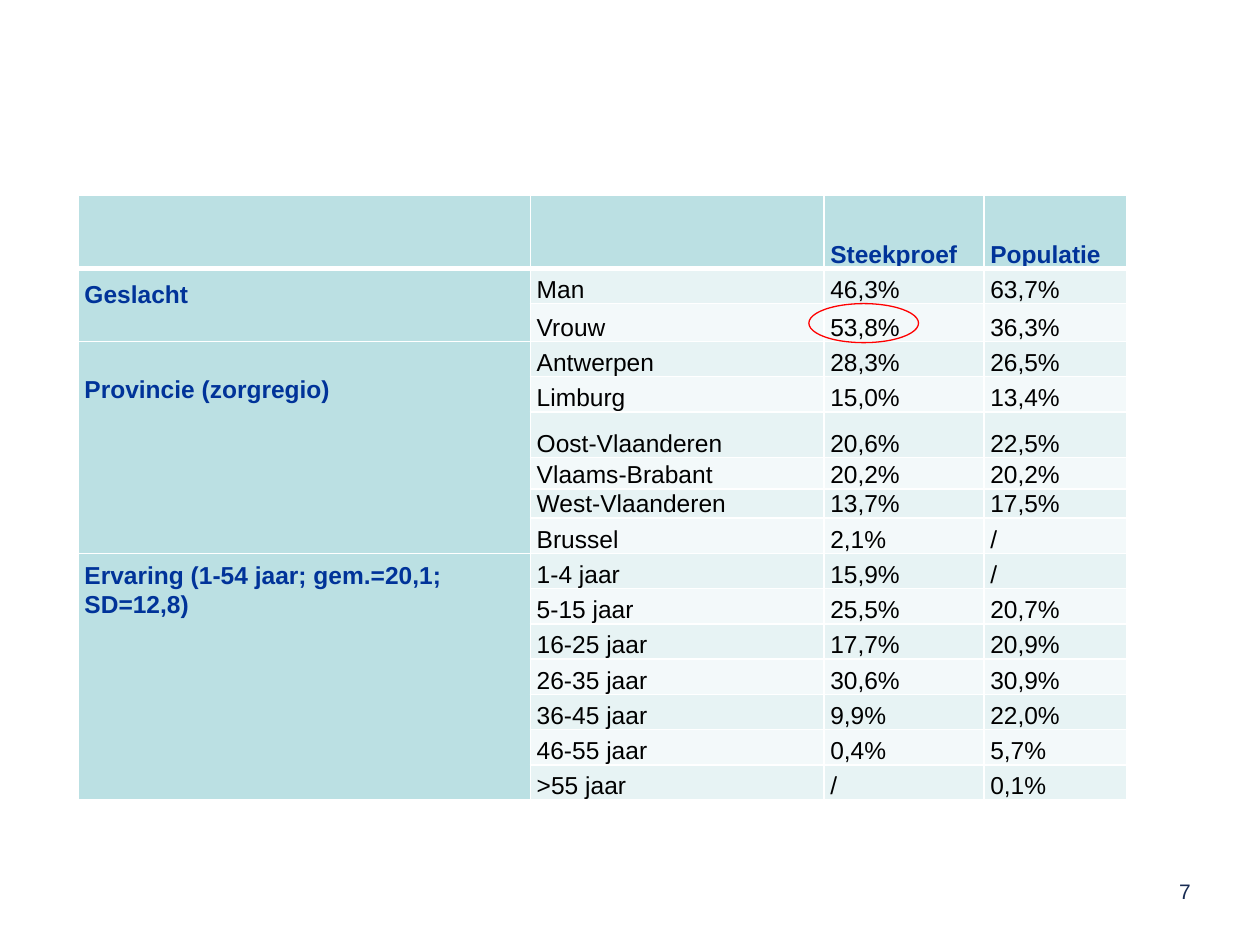
from lxml import etree
from pptx import Presentation
from pptx.dml.color import RGBColor
from pptx.enum.shapes import MSO_SHAPE as Shape
from pptx.enum.text import MSO_ANCHOR as Anchor, PP_ALIGN as Align
from pptx.oxml.ns import qn
from pptx.util import Inches, Pt

LABEL_FILL = "BBE0E3"
BAND_FILLS = ["E7F3F4", "F3F9FA"]
LABEL_COLOR = "003399"

COLUMN_WIDTHS = [3.59, 2.33, 1.27, 1.13]
ROW_HEIGHTS = [0.58, 0.28, 0.3, 0.28, 0.28, 0.36, 0.25, 0.23] + [0.28] * 8

HEADER = ["", "", "Steekproef", "Populatie"]
# Label, space above the label, rows
GROUPS = [
    ("Geslacht", 0.09, [
        ("Man", "46,3%", "63,7%"),
        ("Vrouw", "53,8%", "36,3%"),
    ]),
    ("Provincie (zorgregio)", 0.26, [
        ("Antwerpen", "28,3%", "26,5%"),
        ("Limburg", "15,0%", "13,4%"),
        ("Oost-Vlaanderen", "20,6%", "22,5%"),
        ("Vlaams-Brabant", "20,2%", "20,2%"),
        ("West-Vlaanderen", "13,7%", "17,5%"),
        ("Brussel", "2,1%", "/"),
    ]),
    ("Ervaring (1-54 jaar; gem.=20,1; SD=12,8)", 0.06, [
        ("1-4 jaar", "15,9%", "/"),
        ("5-15 jaar", "25,5%", "20,7%"),
        ("16-25 jaar", "17,7%", "20,9%"),
        ("26-35 jaar", "30,6%", "30,9%"),
        ("36-45 jaar", "9,9%", "22,0%"),
        ("46-55 jaar", "0,4%", "5,7%"),
        (">55 jaar", "/", "0,1%"),
    ]),
]


def color(value):
    return RGBColor.from_string(value)


def add_borders(cell, top, bottom):
    """Give a cell white borders; top and bottom are widths in points."""
    properties = cell._tc.get_or_add_tcPr()
    for side, width in [("L", 1), ("R", 1), ("T", top), ("B", bottom)]:
        line = etree.SubElement(properties, qn(f"a:ln{side}"), w=str(Pt(width)))
        fill = etree.SubElement(line, qn("a:solidFill"))
        etree.SubElement(fill, qn("a:srgbClr"), val="FFFFFF")


deck = Presentation()
deck.slide_width = Inches(10)
deck.slide_height = Inches(7.5)
page = deck.slides.add_slide(deck.slide_layouts[6])

# Table
frame = page.shapes.add_table(
    len(ROW_HEIGHTS), len(COLUMN_WIDTHS),
    Inches(0.62), Inches(1.55), Inches(8.31), Inches(4.84))
table = frame.table
for column, width in zip(table.columns, COLUMN_WIDTHS):
    column.width = Inches(width)
for row, height in zip(table.rows, ROW_HEIGHTS):
    row.height = Inches(height)

texts = [HEADER]
label_cells = []
for label, space_above, rows in GROUPS:
    first = len(texts)
    texts += [[label if i == 0 else "", *values] for i, values in enumerate(rows)]
    label_cell = table.cell(first, 0)
    label_cell.merge(table.cell(len(texts) - 1, 0))
    label_cells.append((label_cell, space_above))

for r, row_texts in enumerate(texts):
    for c, text in enumerate(row_texts):
        cell = table.cell(r, c)
        is_label = r == 0 or c == 0
        add_borders(cell, top=3 if r == 1 else 1, bottom=3 if r == 0 else 1)
        cell.fill.solid()
        cell.fill.fore_color.rgb = color(
            LABEL_FILL if is_label else BAND_FILLS[(r - 1) % 2])
        cell.vertical_anchor = Anchor.BOTTOM
        cell.margin_left = cell.margin_right = Inches(0.05)
        cell.margin_top = cell.margin_bottom = 0
        cell.text = text
        para = cell.text_frame.paragraphs[0]
        para.line_spacing = 1.06
        para.font.size = Pt(14)
        for span in para.runs:
            span.font.name = "Arial"
            span.font.size = Pt(14)
            span.font.bold = is_label
            span.font.color.rgb = color(LABEL_COLOR if is_label else "000000")

for label_cell, space_above in label_cells:
    label_cell.vertical_anchor = Anchor.TOP
    label_cell.margin_top = Inches(space_above)

# Page number
number_box = page.shapes.add_textbox(
    Inches(8.67), Inches(6.97), Inches(0.78), Inches(0.39))
number_frame = number_box.text_frame
number_frame.word_wrap = True
number_frame.margin_left = number_frame.margin_right = 0
number_frame.margin_top = number_frame.margin_bottom = 0
number_frame.text = "7"
para = number_frame.paragraphs[0]
para.alignment = Align.RIGHT
span = para.runs[0]
span.font.name = "Arial"
span.font.size = Pt(12)
span.font.color.rgb = color("182B52")

# Ring around the share of women in the sample
ring = page.shapes.add_shape(
    Shape.OVAL, Inches(6.42), Inches(2.41), Inches(0.87), Inches(0.31))
ring.shadow.inherit = False
ring.fill.background()
ring.line.color.rgb = color("FF0000")
ring.line.width = Pt(0.75)

deck.save("out.pptx")
